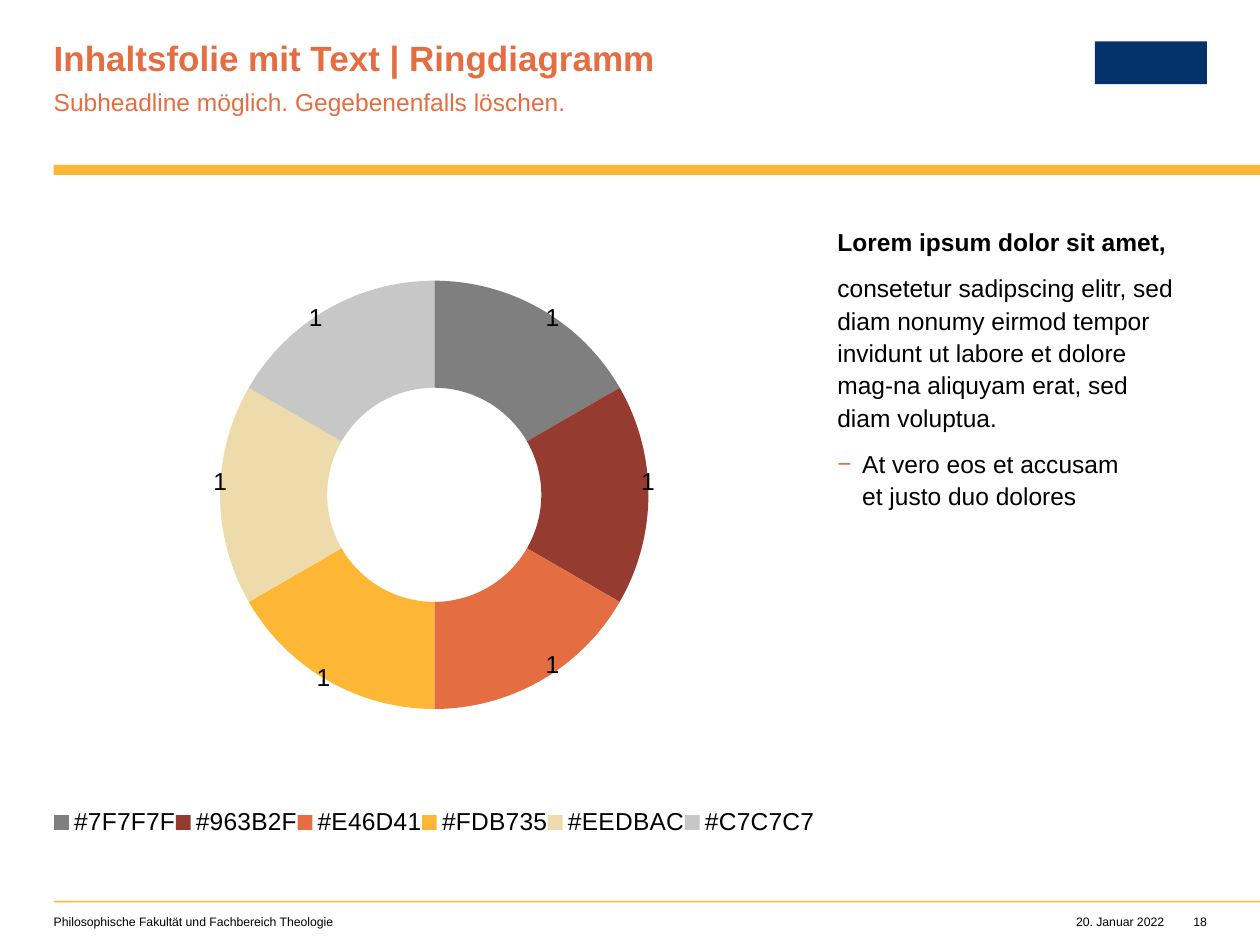
from lxml import etree
from pptx import Presentation
from pptx.chart.data import CategoryChartData
from pptx.dml.color import RGBColor
from pptx.enum.chart import XL_CHART_TYPE as ChartType, XL_LEGEND_POSITION as LegendPosition
from pptx.enum.shapes import MSO_SHAPE as Preset
from pptx.enum.text import MSO_ANCHOR as Anchor, MSO_AUTO_SIZE as AutoSize, PP_ALIGN as Align
from pptx.oxml.ns import qn
from pptx.util import Pt

COLORS = {"orange": "E46D41", "yellow": "FDB735", "navy": "04316A", "black": "000000"}
SEGMENTS = ["7F7F7F", "963B2F", "E46D41", "FDB735", "EEDBAC", "C7C7C7"]
LABEL_SHIFTS = [(0.05, -0.06), (0.07, -0.02), (0.05, 0.05),
                (-0.04, 0.07), (-0.07, -0.02), (-0.05, -0.06)]
FONT = "Arial"


def style(font, size, color="black", bold=False):
    font.name, font.size, font.bold = FONT, Pt(size), bold
    font.color.rgb = RGBColor.from_string(COLORS[color])


def place(shape, left, top, width, height):
    shape.left, shape.top, shape.width, shape.height = map(Pt, (left, top, width, height))


def frame_of(shape, right_inset=0, wrap=True):
    frame = shape.text_frame
    frame.margin_left = frame.margin_top = frame.margin_bottom = 0
    frame.margin_right = Pt(right_inset)
    frame.word_wrap = wrap
    frame.auto_size = AutoSize.NONE
    frame.vertical_anchor = Anchor.TOP
    return frame


def set_bullet(paragraph, char=None, indent=0):
    props = paragraph._p.get_or_add_pPr()
    props.set("marL", str(Pt(indent)))
    props.set("indent", str(-Pt(indent)))
    if char is None:
        etree.SubElement(props, qn("a:buNone"))
        return
    color = etree.SubElement(props, qn("a:buClr"))
    etree.SubElement(color, qn("a:srgbClr"), val=COLORS["orange"])
    etree.SubElement(props, qn("a:buFont"), typeface=FONT)
    etree.SubElement(props, qn("a:buChar"), char=char)


def write_body(paragraph, text, color="black", bold=False, char=None, indent=0):
    paragraph.text = text
    paragraph.line_spacing = 1.1
    paragraph.space_before, paragraph.space_after = Pt(0), Pt(8)
    paragraph.alignment = Align.LEFT
    style(paragraph.font, 14, color, bold)
    set_bullet(paragraph, char, indent)


def add_block(slide, color, left, top, width, height):
    block = slide.shapes.add_shape(Preset.RECTANGLE, Pt(left), Pt(top), Pt(width), Pt(height))
    block.shadow.inherit = False
    block.fill.solid()
    block.fill.fore_color.rgb = RGBColor.from_string(COLORS[color])
    block.line.fill.background()


def add_header(slide, title, subheadline, left, top, width):
    place(title, left, top, 404, 21.6)
    headline = frame_of(title).paragraphs[0]
    headline.text = "Inhaltsfolie mit Text | Ringdiagramm"
    headline.alignment = Align.LEFT
    headline.line_spacing = 0.9
    style(headline.font, 20, "orange", True)
    place(subheadline, left, top + 24.4, 404, 17.3)
    write_body(frame_of(subheadline, 28).paragraphs[0],
               "Subheadline möglich. Gegebenenfalls löschen.", "orange")
    add_block(slide, "navy", left + 595, top, 64, 24.5)
    add_block(slide, "yellow", left, top + 70.6, width, 5.6)


def add_footer(slide, left, top, width):
    add_block(slide, "yellow", left, top, width, 0.9)
    entries = [("Philosophische Fakultät und Fachbereich Theologie", 0, 323, Align.LEFT),
               ("20. Januar 2022", 583.5, 51, Align.RIGHT),
               ("18", 644.5, 14.5, Align.RIGHT)]
    for text, offset, entry_width, alignment in entries:
        box = slide.shapes.add_textbox(Pt(left + offset), Pt(top + 7.9), Pt(entry_width), Pt(8.5))
        entry = frame_of(box, wrap=alignment == Align.LEFT).paragraphs[0]
        entry.text = text
        entry.alignment = alignment
        style(entry.font, 7)


def add_copy(body, left, top, width, height):
    place(body, left, top, width, height)
    frame = frame_of(body, 14.2)
    write_body(frame.paragraphs[0], "Lorem ipsum dolor sit amet,", bold=True)
    write_body(frame.add_paragraph(),
               "consetetur sadipscing elitr, sed diam nonumy eirmod tempor invidunt "
               "ut labore et dolore mag-na aliquyam erat, sed diam voluptua.")
    point = frame.add_paragraph()
    point.level = 1
    write_body(point, "At vero eos et accusam\net justo duo dolores", char="−", indent=14.2)


def set_layout(parent, index, **values):
    for old in parent.findall(qn("c:layout")):
        parent.remove(old)
    layout = etree.Element(qn("c:layout"))
    manual = etree.SubElement(layout, qn("c:manualLayout"))
    for tag, value in values.items():
        etree.SubElement(manual, qn(f"c:{tag}"), val=str(value))
    parent.insert(index, layout)


def add_ring(slide, left, top, width, height):
    data = CategoryChartData()
    data.categories = [f"#{color}" for color in SEGMENTS]
    data.add_series("Series 1", [1] * len(SEGMENTS))
    chart = slide.shapes.add_chart(ChartType.DOUGHNUT, Pt(left), Pt(top),
                                   Pt(width), Pt(height), data).chart
    chart.has_title = False
    style(chart.font, 10)
    chart.has_legend = True
    legend = chart.legend
    legend.position = LegendPosition.BOTTOM
    legend.include_in_layout = False
    style(legend.font, 14)
    set_layout(legend._element, 1, xMode="edge", yMode="edge", x=0, y=0.92, w=1, h=0.06)

    plot = chart.plots[0]
    plot.vary_by_categories = True
    plot._element.find(qn("c:holeSize")).set("val", "80")
    set_layout(plot._element.getparent(), 0, layoutTarget="inner", xMode="edge",
               yMode="edge", x=0.12, y=0.09, w=0.76, h=0.68)
    ring = plot.series[0]
    ring.data_labels.show_value = True
    style(ring.data_labels.font, 14)
    for number, (color, shift) in enumerate(zip(SEGMENTS, LABEL_SHIFTS)):
        segment = ring.points[number]
        segment.format.fill.solid()
        segment.format.fill.fore_color.rgb = RGBColor.from_string(color)
        segment.format.line.fill.background()
        style(segment.data_label.font, 14)
    for label, (x, y) in zip(ring._element.iter(qn("c:dLbl")), LABEL_SHIFTS):
        set_layout(label, 1, x=x, y=y)


def main():
    deck = Presentation()
    deck.slide_width, deck.slide_height = Pt(720), Pt(540)
    slide = deck.slides.add_slide(deck.slide_layouts[3])
    title, subheadline, body = slide.placeholders
    add_header(slide, title, subheadline, 30.7, 23.7, 689.3)
    add_ring(slide, 30.7, 128, 435, 360)
    add_copy(body, 478.5, 128, 211, 360)
    add_footer(slide, 30.7, 514.8, 689.3)
    deck.save("out.pptx")


if __name__ == "__main__":
    main()
